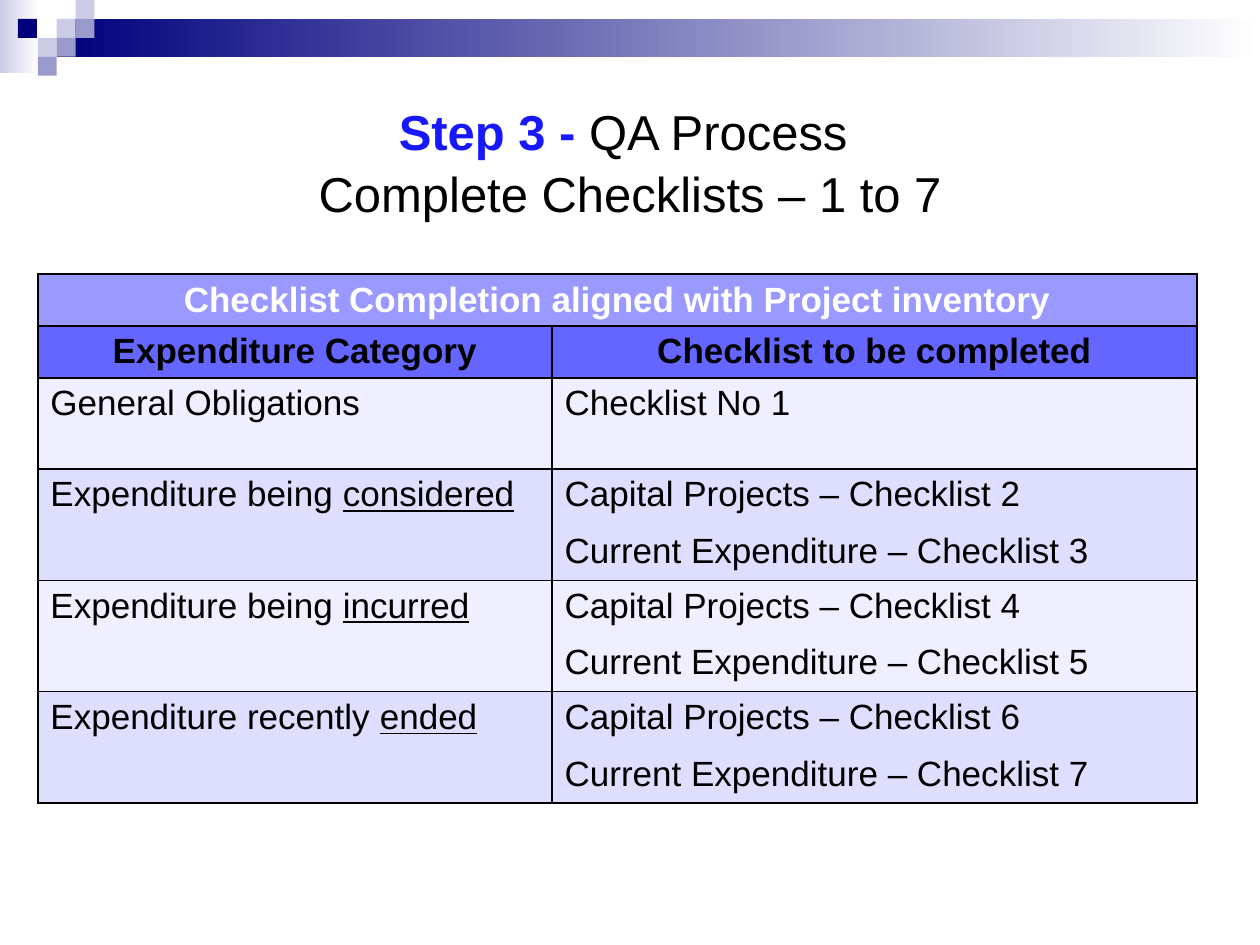
from lxml import etree
from pptx import Presentation
from pptx import util as u
from pptx.dml.color import RGBColor
from pptx.enum import shapes, text
from pptx.oxml.ns import qn

BLACK, WHITE, NAVY = "000000", "FFFFFF", "00007D"
LILAC, MAUVE = "CCCCE6", "9999CC"
CENTER, LEFT = text.PP_ALIGN.CENTER, text.PP_ALIGN.LEFT


def rgb(value):
    return RGBColor.from_string(value)


class ChecklistSlide:
    font = "Arial"
    tile = 0.15  # side of one grid square, in inches

    def __init__(self, presentation):
        self.width = presentation.slide_width
        self.height = presentation.slide_height
        self.slide = presentation.slides.add_slide(presentation.slide_layouts[5])

    def area(self, left, top, width, height):
        """Turn shares of the slide into lengths."""
        return (int(left * self.width), int(top * self.height),
                int(width * self.width), int(height * self.height))

    def add_words(self, paragraph, words, size, color=BLACK, **formats):
        run = paragraph.add_run()
        run.text = words
        settings = {"name": self.font, "size": u.Pt(size), "bold": False, **formats}
        for key, value in settings.items():
            setattr(run.font, key, value)
        run.font.color.rgb = rgb(color)

    def block(self, column, row, columns, rows, *colors):
        """Add a rectangle on the tile grid; two colours make a gradient."""
        lengths = [u.Inches(n * self.tile) for n in (column, row, columns, rows)]
        shape = self.slide.shapes.add_shape(shapes.MSO_SHAPE.RECTANGLE, *lengths)
        shape.shadow.inherit = False
        shape.line.fill.background()
        if len(colors) == 1:
            shape.fill.solid()
            shape.fill.fore_color.rgb = rgb(colors[0])
        else:
            shape.fill.gradient()
            shape.fill.gradient_angle = 0
            for stop, position, color in zip(shape.fill.gradient_stops, (0, 1), colors):
                stop.position = position
                stop.color.rgb = rgb(color)

    def title(self, area, lines):
        shape = self.slide.shapes.title
        for key, value in zip(("left", "top", "width", "height"), self.area(*area)):
            setattr(shape, key, value)
        frame = shape.text_frame
        frame.word_wrap = True
        frame.auto_size = text.MSO_AUTO_SIZE.NONE
        frame.vertical_anchor = text.MSO_ANCHOR.MIDDLE
        paragraph = frame.paragraphs[0]
        paragraph.alignment = CENTER
        paragraph.line_spacing = 1.05
        for number, runs in enumerate(lines):
            if number:
                paragraph.add_line_break()
            for words, formats in runs:
                self.add_words(paragraph, words, 28, **formats)

    def borders(self, cell):
        properties = cell._tc.get_or_add_tcPr()
        for side in ("lnL", "lnR", "lnT", "lnB"):
            line = etree.SubElement(properties, qn(f"a:{side}"), w=str(u.Pt(1)))
            fill = etree.SubElement(line, qn("a:solidFill"))
            etree.SubElement(fill, qn("a:srgbClr"), val=BLACK)

    def cell(self, cell, paragraphs, fill, align=LEFT, **formats):
        """Fill a cell; words after a bar are underlined."""
        self.borders(cell)
        cell.fill.solid()
        cell.fill.fore_color.rgb = rgb(fill)
        frame = cell.text_frame
        for number, words in enumerate(paragraphs):
            paragraph = frame.add_paragraph() if number else frame.paragraphs[0]
            paragraph.alignment = align
            paragraph.space_before = u.Pt(10 if number else 0)
            plain, _, underlined = words.partition("|")
            self.add_words(paragraph, plain, 20, **formats)
            if underlined:
                self.add_words(paragraph, underlined, 20, underline=True, **formats)

    def table(self, area, column_shares, row_shares, heading, headers, rows):
        left, top, width, height = self.area(*area)
        table = self.slide.shapes.add_table(
            len(row_shares), len(column_shares), left, top, width, height).table
        for column, share in zip(table.columns, column_shares):
            column.width = int(width * share / sum(column_shares))
        for row, share in zip(table.rows, row_shares):
            row.height = int(height * share / sum(row_shares))
        # Heading across both columns, then column headers
        self.cell(table.cell(0, 0), [heading], "9999FF", CENTER, color=WHITE, bold=True)
        self.borders(table.cell(0, 1))
        table.cell(0, 0).merge(table.cell(0, 1))
        for column, header in enumerate(headers):
            self.cell(table.cell(1, column), [header], "6565FF", CENTER, bold=True)
        # Banded body rows
        for number, (category, checklists) in enumerate(rows):
            fill = ("EFEFFF", "DEDEFF")[number % 2]
            self.cell(table.cell(number + 2, 0), [category], fill)
            self.cell(table.cell(number + 2, 1), checklists, fill)


def main():
    presentation = Presentation()
    presentation.slide_width, presentation.slide_height = u.Inches(10), u.Inches(7.5)
    page = ChecklistSlide(presentation)

    # Corner gradient, banner and mosaic
    page.block(0, 0, 2.05, 3.87, LILAC, WHITE)
    page.block(3, 1, 63.67, 2, NAVY, WHITE)
    for column, row, color in [(3, 1, LILAC), (4, 0, LILAC), (4, 1, MAUVE), (2, 2, LILAC),
                               (0.95, 1, NAVY), (3, 2, MAUVE), (2, 3, MAUVE)]:
        page.block(column, row, 1, 1, color)

    # Title
    page.title((0.05, 0.07, 0.9, 0.2), [
        [("Step 3 -", {"color": "1818FF", "bold": True}), (" QA Process ", {})],
        [("Complete Checklists – 1 to 7", {})],
    ])

    # Checklist table
    categories = ["Expenditure being |considered", "Expenditure being |incurred",
                  "Expenditure recently |ended"]
    rows = [("General Obligations", ["Checklist No 1"])]
    for number, category in enumerate(categories):
        first = 2 + 2 * number
        rows.append((category, [f"Capital Projects – Checklist {first}",
                                f"Current Expenditure – Checklist {first + 1}"]))
    page.table((0.03, 0.29, 0.92, 0.56), (4.09, 5.13),
               (0.41, 0.41, 0.72, 0.88, 0.88, 0.88),
               "Checklist Completion aligned with Project inventory",
               ["Expenditure Category", "Checklist to be completed"], rows)

    presentation.save("out.pptx")


if __name__ == "__main__":
    main()
